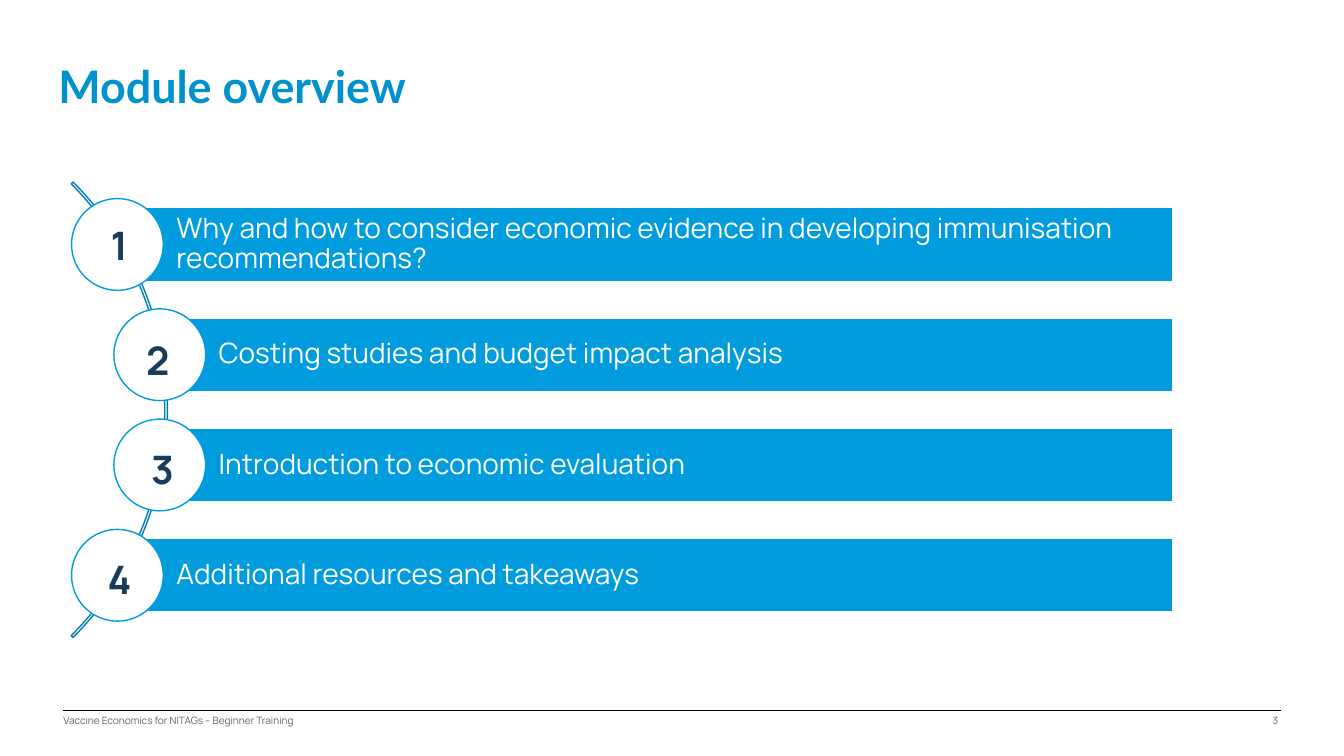
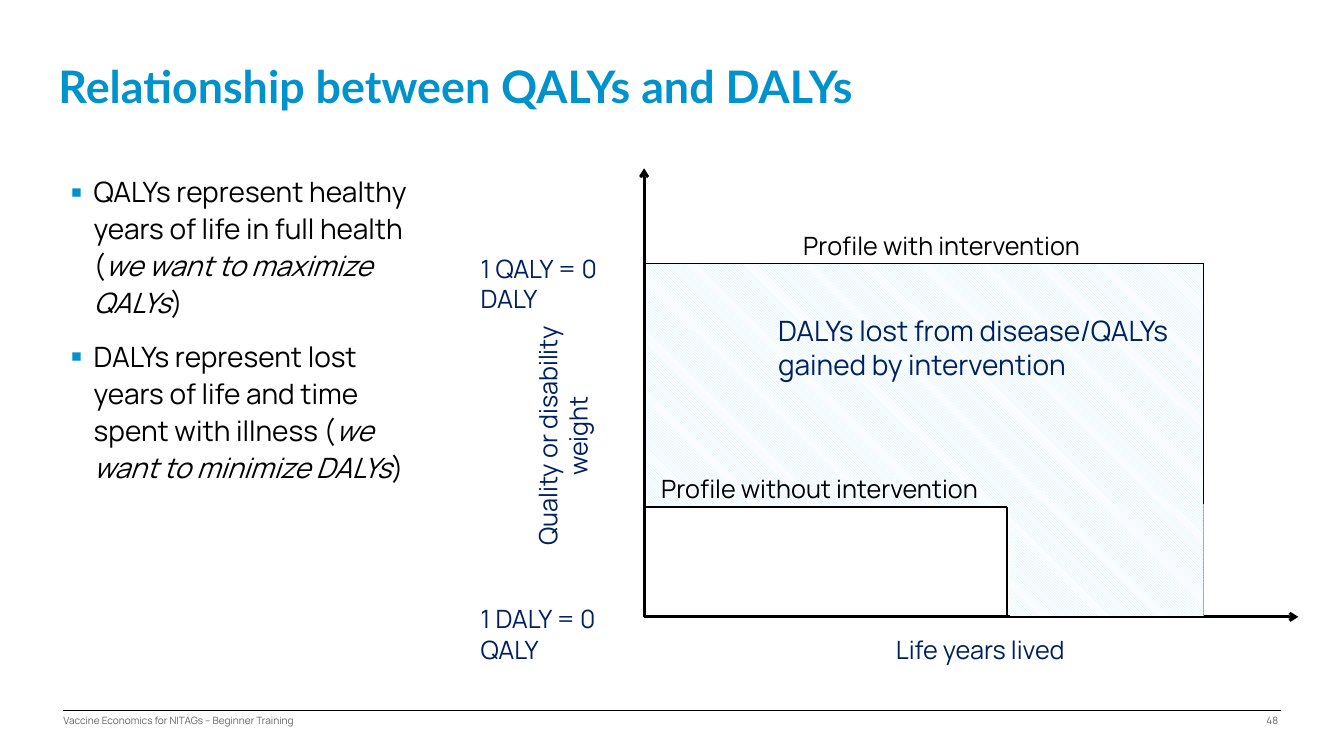
from lxml import etree
from pptx import Presentation
from pptx import util as u
from pptx.dml.color import RGBColor
from pptx.enum import dml, shapes, text
from pptx.oxml.ns import qn

COLUMNS, ROWS = 133.33, 75
TITLE_ONLY, TITLE_AND_BODY = 5, 1
SKY, TEAL, ARC = "009CDE", "0092CC", "007DB2"
NAVY, INK, GREY = "002060", "173C5B", "646464"
BLACK, WHITE, PALE = "000000", "FFFFFF", "C5EEFF"
FOOTER = "Vaccine Economics for NITAGs – Beginner Training"


def rgb(value):
    return RGBColor.from_string(value)


def cells(*counts):
    return [u.Inches(count / 10) for count in counts]


def apply(target, values):
    for name, value in values.items():
        setattr(target, name, value)


def insets(left, top, right, bottom):
    sides = ("left", "top", "right", "bottom")
    return {f"margin_{side}": size for side, size in zip(sides, cells(left, top, right, bottom))}


class Deck:
    def __init__(self):
        self.file = Presentation()
        self.file.slide_width, self.file.slide_height = cells(COLUMNS, ROWS)
        self.slide = None

    def new_slide(self, layout, title, page):
        self.slide = self.file.slides.add_slide(self.file.slide_layouts[layout])
        heading = self.slide.shapes.title
        self.place(heading, 5.4, 5.9, 101.3, 5.9)
        self.frame(heading, anchor=text.MSO_ANCHOR.MIDDLE, **insets(0.4, 0.4, 0.4, 0.4))
        self.fill_text(heading, [title], size=32, color=TEAL, font="Lato", bold=True,
                       paragraph={"line_spacing": 0.9})
        self.line(6.3, 70.5, 127.1, 70.5)
        for left, width, words, side in (
            (6.3, 82.8, FOOTER, text.PP_ALIGN.LEFT),
            (117, 9.8, page, text.PP_ALIGN.RIGHT),
        ):
            self.label(words, left, 70.9, width, 1.2, size=7.2, color=GREY,
                       align=side, margins=insets(0, 0, 0, 0))

    def place(self, item, *box):
        apply(item, dict(zip(("left", "top", "width", "height"), cells(*box))))

    def frame(self, item, anchor=text.MSO_ANCHOR.TOP, fit=text.MSO_AUTO_SIZE.NONE, **margins):
        apply(item.text_frame, {"word_wrap": True, "auto_size": fit,
                                "vertical_anchor": anchor, **margins})

    def fill_text(self, item, paragraphs, size, color, font="Manrope", bold=False,
                  align=text.PP_ALIGN.LEFT, paragraph=None, bullet=False):
        for index, content in enumerate(paragraphs):
            frame = item.text_frame
            line = frame.add_paragraph() if index else frame.paragraphs[0]
            apply(line, {"alignment": align, **(paragraph or {})})
            if bullet:
                self.bullet(line)
                line.space_before = u.Pt(6 if index else 0)
            runs = [content] if isinstance(content, str) else content
            for position, words in enumerate(runs):
                run = line.add_run()
                run.text = words
                apply(run.font, {"name": font, "size": u.Pt(size), "bold": bold,
                                 "italic": position % 2 == 1})
                run.font.color.rgb = rgb(color)

    def bullet(self, line):
        properties = line._p.get_or_add_pPr()
        properties.set("marL", str(u.Inches(0.3)))
        properties.set("indent", str(u.Inches(-0.23)))
        tint = etree.SubElement(properties, qn("a:buClr"))
        etree.SubElement(tint, qn("a:srgbClr"), val=TEAL)
        etree.SubElement(properties, qn("a:buSzPct"), val="120000")
        etree.SubElement(properties, qn("a:buFont"), typeface="Arial")
        etree.SubElement(properties, qn("a:buChar"), char="▪")

    def body(self, paragraphs, *box):
        holder = self.slide.placeholders[1]
        self.place(holder, *box)
        self.frame(holder, **insets(0, 0, 0, 0))
        self.fill_text(holder, paragraphs, size=20, color=BLACK, bullet=True,
                       paragraph={"line_spacing": 1.1, "space_after": u.Pt(6)})

    def label(self, words, *box, size=18, color=NAVY, bold=False,
              align=text.PP_ALIGN.LEFT, margins=None, upright=False):
        caption = self.slide.shapes.add_textbox(*cells(*box))
        self.frame(caption, fit=text.MSO_AUTO_SIZE.SHAPE_TO_FIT_TEXT, **(margins or {}))
        if upright:
            caption.text_frame._txBody.bodyPr.set("vert", "vert270")
        self.fill_text(caption, [words], size, color, bold=bold, align=align)

    def shape(self, kind, *box, fill=None, outline=None):
        figure = self.slide.shapes.add_shape(kind, *cells(*box))
        figure.shadow.inherit = False
        if fill:
            figure.fill.solid()
            figure.fill.fore_color.rgb = rgb(fill)
        else:
            figure.fill.background()
        if outline:
            figure.line.color.rgb = rgb(outline)
            figure.line.width = u.Pt(1)
        else:
            figure.line.fill.background()
        return figure

    def hatched(self, *box):
        fill = self.shape(shapes.MSO_SHAPE.RECTANGLE, *box).fill
        fill.patterned()
        fill.pattern = dml.MSO_PATTERN.LIGHT_DOWNWARD_DIAGONAL
        fill.fore_color.rgb, fill.back_color.rgb = rgb(PALE), rgb(WHITE)

    def bar(self, words, *box):
        band = self.shape(shapes.MSO_SHAPE.RECTANGLE, *box, fill=SKY, outline=WHITE)
        self.frame(band, anchor=text.MSO_ANCHOR.MIDDLE, **insets(5.8, 0.6, 0.6, 0.6))
        self.fill_text(band, [words], size=20, color=WHITE, paragraph={"line_spacing": 0.9})

    def line(self, *ends, weight=0.75, arrow=False):
        stroke = self.slide.shapes.add_connector(shapes.MSO_CONNECTOR.STRAIGHT, *cells(*ends))
        stroke.line.color.rgb = rgb(BLACK)
        stroke.line.width = u.Pt(weight)
        properties = stroke._element.spPr
        if arrow:
            etree.SubElement(properties.find(qn("a:ln")), qn("a:tailEnd"), type="arrow")
        etree.SubElement(properties, qn("a:effectLst"))


def module_overview(deck):
    deck.new_slide(TITLE_ONLY, "Module overview", "3")
    arc = deck.shape(shapes.MSO_SHAPE.BLOCK_ARC, -47.3, 8.7, 63.9, 63.9, outline=ARC)
    for index, value in enumerate((189, 27, 0.004)):
        arc.adjustments[index] = value
    step, bar_right = 10.94, 116.3
    modules = (
        ("Why and how to consider economic evidence in developing immunisation recommendations?",
         7.1, 10, 21.5),
        ("Costing studies and budget impact analysis", 11.3, 13.5, 32.9),
        ("Introduction to economic evaluation", 11.3, 14, 43.7),
        ("Additional resources and takeaways", 7.1, 9.7, 54.6),
    )
    for index, (topic, circle_left, number_left, number_top) in enumerate(modules):
        bar_left, drop = circle_left + 4.6, index * step
        deck.bar(topic, bar_left, 20.62 + drop, bar_right - bar_left, 7.3)
        deck.shape(shapes.MSO_SHAPE.OVAL, circle_left, 19.7 + drop, 9.1, 9.1,
                   fill=WHITE, outline=SKY)
        deck.label(str(index + 1), number_left, number_top, 5.8, 5.7,
                   size=28, color=INK, bold=True)


def qalys_and_dalys(deck):
    deck.new_slide(TITLE_AND_BODY, "Relationship between QALYs and DALYs", "48")
    deck.body((
        ("QALYs represent healthy years of life in full health (",
         "we want to maximize QALYs", ")"),
        ("DALYs represent lost years of life and time spent with illness (",
         "we want to minimize DALYs", ")"),
    ), 6.3, 17, 36.5, 47.4)

    origin, base = 63.9, 61.2
    without_right, without_top = 99.9, 50.3
    with_right, with_top = 119.4, 26.1
    deck.hatched(origin, with_top, with_right - origin, without_top - with_top)
    for axis_end in ((128.8, base), (origin, 16.7)):
        deck.line(origin, base, *axis_end, weight=2, arrow=True)
    for right, top in ((without_right, without_top), (with_right, with_top)):
        deck.line(origin, top, right, top)
        deck.line(right, top, right, base)
    deck.hatched(100.2, 50, with_right - 100.2, 11.1)

    deck.label("Life years lived", 87.9, 62.4, 25, 4)
    deck.label("Quality or disability weight", 52.3, 29.2, 8.1, 28.1,
               align=text.PP_ALIGN.CENTER, upright=True)
    for weight, top in (("1 QALY = 0 DALY", 24.6), ("1 DALY = 0 QALY", 59.4)):
        deck.label(weight, 46.7, top, 17.2, 7.1)
    deck.label("DALYs lost from disease/QALYs gained by intervention",
               76.2, 30.6, 43.8, 11.1, size=20)
    for profile, left, top in (
        ("Profile with intervention", 78.7, 22.4),
        ("Profile without intervention", 64.6, 46.5),
    ):
        deck.label(profile, left, top, 43.8, 4, color=BLACK)


def main():
    deck = Deck()
    module_overview(deck)
    qalys_and_dalys(deck)
    deck.file.save("out.pptx")


if __name__ == "__main__":
    main()
